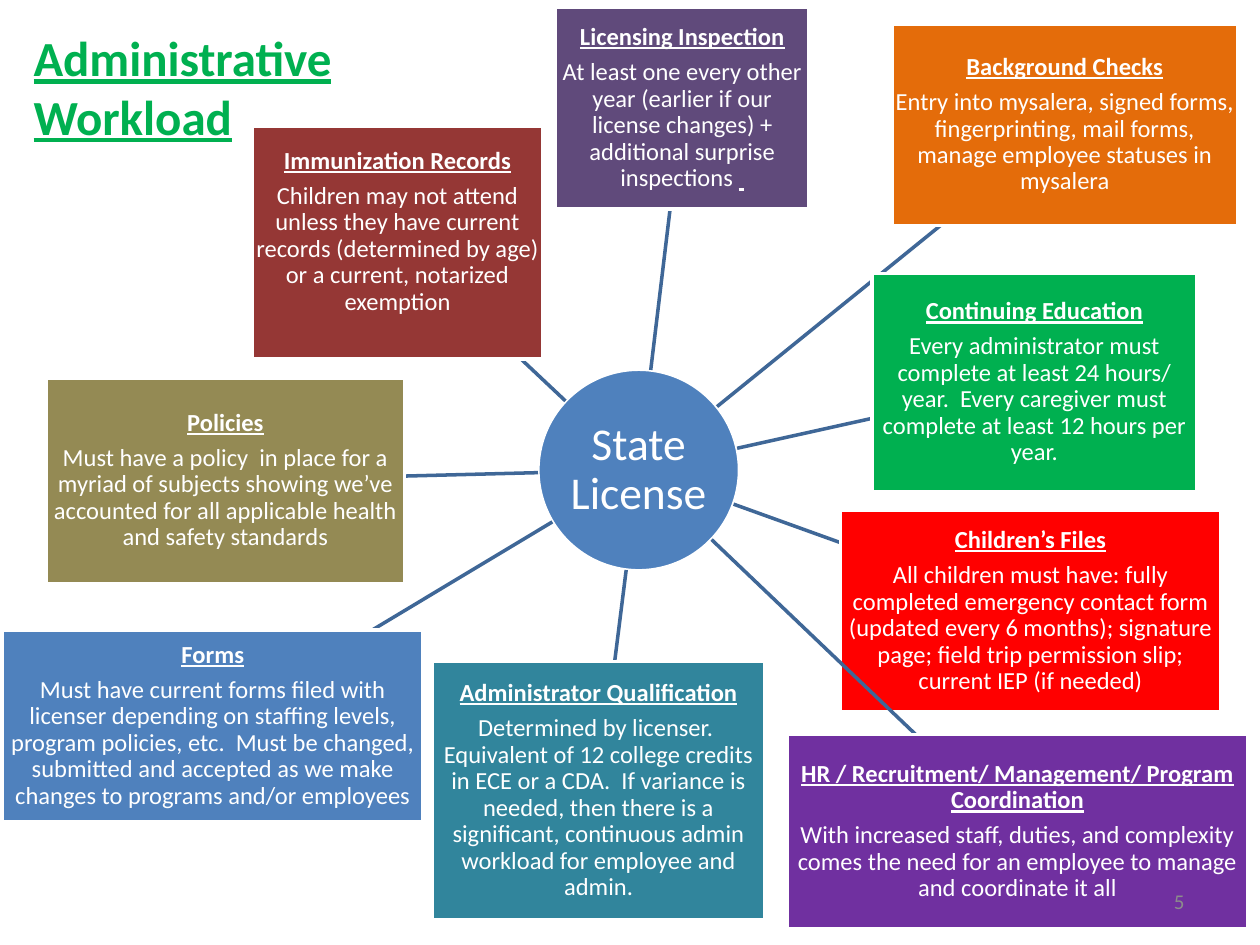
from pptx import Presentation
from pptx.dml.color import RGBColor
from pptx.enum.shapes import MSO_CONNECTOR, MSO_SHAPE
from pptx.enum.text import MSO_ANCHOR, MSO_AUTO_SIZE, PP_ALIGN
from pptx.oxml.ns import qn
from pptx.util import Pt
from lxml import etree

RECTANGLE, OVAL = MSO_SHAPE.RECTANGLE, MSO_SHAPE.OVAL
STRAIGHT = MSO_CONNECTOR.STRAIGHT
TOP, MIDDLE = MSO_ANCHOR.TOP, MSO_ANCHOR.MIDDLE
LEFT, CENTER, RIGHT = PP_ALIGN.LEFT, PP_ALIGN.CENTER, PP_ALIGN.RIGHT
NO_AUTOFIT = MSO_AUTO_SIZE.NONE

HUB_LEFT, HUB_TOP, HUB_SIZE = 307.4, 211, 115.2
HUB_X, HUB_Y = HUB_LEFT + HUB_SIZE / 2, HUB_TOP + HUB_SIZE / 2

# left, top, width, height, fill, heading, body; clockwise from the top
DUTIES = [
    (317.5, 4.3, 144.7, 115.2, "604A7B", "Licensing Inspection",
     "At least one every other year (earlier if our license changes) + "
     "additional surprise inspections "),
    (509.8, 13.7, 197.3, 115.2, "E46C0A", "Background Checks",
     "Entry into mysalera, signed forms, fingerprinting, mail forms, "
     "manage employee statuses in mysalera"),
    (498.2, 156.2, 185.8, 124.6, "00B050", "Continuing Education",
     "Every administrator must complete at least 24 hours/ year.  "
     "Every caregiver must complete at least 12 hours per year."),
    (480.2, 291.6, 217.4, 115.2, "FF0000", "Children’s Files",
     "All children must have: fully completed emergency contact form "
     "(updated every 6 months); signature page; field trip permission slip; "
     "current IEP (if needed)"),
    (450, 419.8, 262.8, 110.9, "7030A0",
     "HR / Recruitment/ Management/ Program Coordination",
     "With increased staff, duties, and complexity comes the need for an "
     "employee to manage and coordinate it all"),
    (247, 378, 190, 147.6, "31859C", "Administrator Qualification",
     "Determined by licenser.  Equivalent of 12 college credits in ECE or a "
     "CDA.  If variance is needed, then there is a significant, continuous "
     "admin workload for employee and admin."),
    (1.4, 360, 240.5, 109.4, "4F81BD", "Forms",
     "Must have current forms filed with licenser depending on staffing "
     "levels, program policies, etc.  Must be changed, submitted and "
     "accepted as we make changes to programs and/or employees"),
    (26.6, 216, 204.5, 117.4, "948A54", "Policies",
     "Must have a policy  in place for a myriad of subjects showing we’ve "
     "accounted for all applicable health and safety standards"),
    (144, 72, 166.3, 133.2, "953735", "Immunization Records",
     "Children may not attend unless they have current records (determined "
     "by age) or a current, notarized exemption"),
]


def add_span(para, text, size, color, strong=False):
    """Add a run; strong means bold and underlined."""
    span = para.add_run()
    span.text = text
    span.font.name = "Calibri"
    span.font.size = Pt(size)
    span.font.color.rgb = RGBColor.from_string(color)
    span.font.bold = span.font.underline = strong


def add_block(kind, left, top, width, height, fill, inset):
    block = slide.shapes.add_shape(kind, Pt(left), Pt(top), Pt(width), Pt(height))
    block.shadow.inherit = False
    block.fill.solid()
    block.fill.fore_color.rgb = RGBColor.from_string(fill)
    block.line.color.rgb = RGBColor.from_string("FFFFFF")
    block.line.width = Pt(2)
    frame = block.text_frame
    frame.word_wrap = True
    frame.vertical_anchor = MIDDLE
    frame.margin_left = frame.margin_right = Pt(inset)
    frame.margin_top = frame.margin_bottom = Pt(inset)
    return frame


deck = Presentation()
deck.slide_width, deck.slide_height = Pt(720), Pt(540)
slide = deck.slides.add_slide(deck.slide_layouts[5])

title = slide.shapes.title
title.left, title.top, title.width, title.height = Pt(12), Pt(12), Pt(234), Pt(75)
title.text_frame.auto_size = NO_AUTOFIT
title.text_frame.vertical_anchor = TOP
for index, word in enumerate(["Administrative", "Workload"]):
    para = title.text_frame.add_paragraph() if index else title.text_frame.paragraphs[0]
    para.alignment = LEFT
    add_span(para, word, 28, "00B050", strong=True)

hub = add_block(OVAL, HUB_LEFT, HUB_TOP, HUB_SIZE, HUB_SIZE, "4F81BD", 1.4)
para = hub.paragraphs[0]
para.alignment = CENTER
para.line_spacing = 0.9
add_span(para, "State License", 26, "FFFFFF")

for left, top, width, height, fill, heading, body in DUTIES:
    # The spoke runs between the centres, from the hub's rim to the box's edge
    run_x, run_y = left + width / 2 - HUB_X, top + height / 2 - HUB_Y
    start = HUB_SIZE / 2 / (run_x ** 2 + run_y ** 2) ** 0.5
    end = 1 - min(width / 2 / max(abs(run_x), 0.01), height / 2 / max(abs(run_y), 0.01))
    spoke = slide.shapes.add_connector(
        STRAIGHT,
        Pt(HUB_X + run_x * start), Pt(HUB_Y + run_y * start),
        Pt(HUB_X + run_x * end), Pt(HUB_Y + run_y * end))
    spoke.line.color.rgb = RGBColor.from_string("3F6797")
    spoke.line.width = Pt(2)
    etree.SubElement(spoke.element.spPr, qn("a:effectLst"))

    box = add_block(RECTANGLE, left, top, width, height, fill, 0.7)
    heading_para, body_para = box.paragraphs[0], box.add_paragraph()
    heading_para.space_after = Pt(5)
    for para in (heading_para, body_para):
        para.alignment = CENTER
        para.line_spacing = 0.9
    add_span(heading_para, heading, 14, "FFFFFF", strong=True)
    add_span(body_para, body, 14, "FFFFFF")
    if heading == "Licensing Inspection":
        add_span(body_para, " ", 14, "FFFFFF", strong=True)
    if heading == "Immunization Records":
        box.margin_bottom = Pt(13)

number = slide.shapes.add_textbox(Pt(516), Pt(500.4), Pt(168), Pt(28.8)).text_frame
number.word_wrap = True
number.vertical_anchor = MIDDLE
number.paragraphs[0].alignment = RIGHT
add_span(number.paragraphs[0], "5", 12, "8C8C8C")

deck.save("out.pptx")
